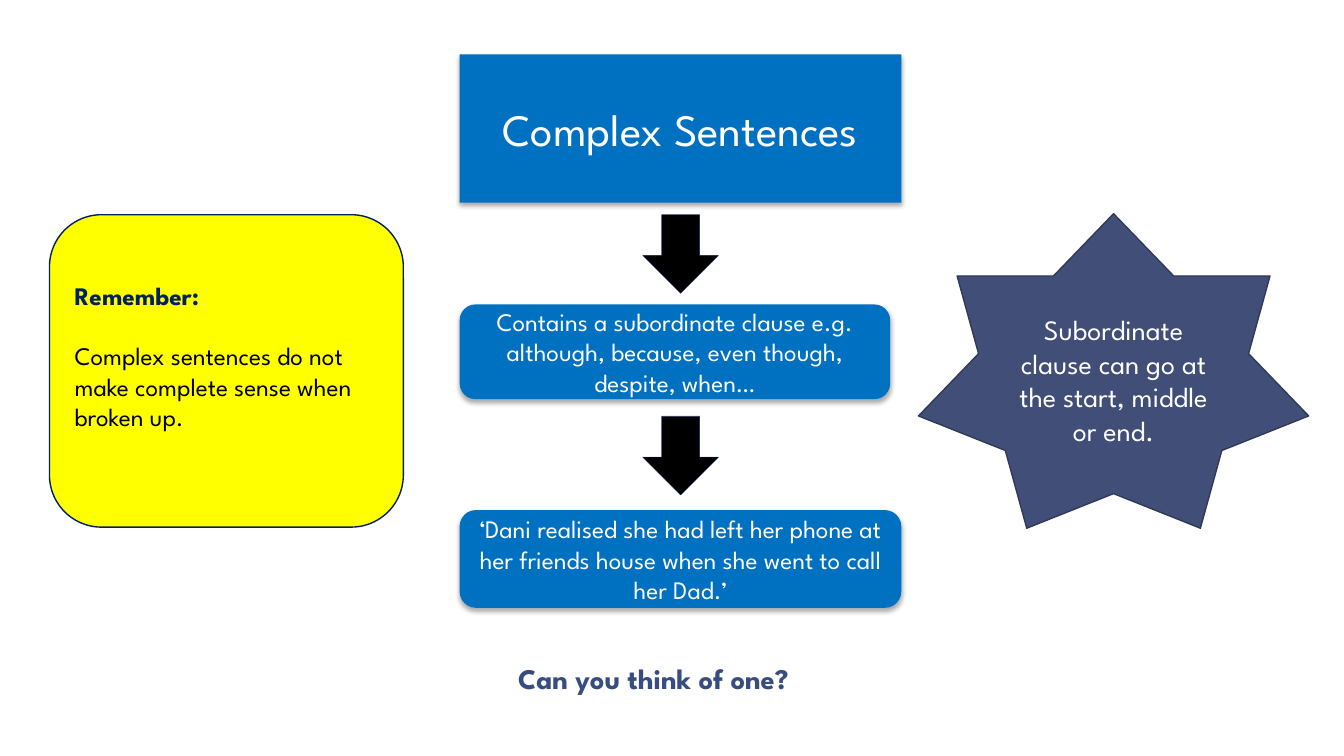
from lxml import etree
from pptx import Presentation
from pptx import util as u
from pptx.dml.color import RGBColor
from pptx.enum import shapes, text
from pptx.oxml.ns import qn

WIDE, HIGH = u.Inches(13.33), u.Inches(7.5)
FONT = "League Spartan"
HUES = {"blue": "0070C0", "navy": "002060", "slate": "414E77", "edge": "303A58",
        "ask": "374C81", "yellow": "FFFF00", "black": "000000", "white": "FFFFFF"}
KIND = shapes.MSO_SHAPE
MID = text.PP_ALIGN.CENTER
LEFT, SPAN = 34.2, 32.86  # middle column, percent of slide width


def hue(name):
    return RGBColor.from_string(HUES[name])


def place(x, y, w, h):
    """Turn percentages of the slide into left, top, width, height."""
    return [int(full * part / 100) for full, part in zip((WIDE, HIGH) * 2, (x, y, w, h))]


def paint(shape, fill, line=None, width=1):
    shape.shadow.inherit = False
    shape.fill.solid()
    shape.fill.fore_color.rgb = hue(fill)
    if line:
        shape.line.color.rgb = hue(line)
        shape.line.width = u.Pt(width)
    else:
        shape.line.fill.background()


def write(shape, *lines, size=18, color="white", bold=False, align=MID,
          top=0.05, side=0.1, base=0.05, gap=0, lead=None,
          anchor=text.MSO_ANCHOR.MIDDLE):
    """Fill a shape; a line is a string, or a tuple of string, colour and bold."""
    frame = shape.text_frame
    frame.word_wrap = True
    frame.auto_size = text.MSO_AUTO_SIZE.NONE
    frame.vertical_anchor = anchor
    frame.margin_left = frame.margin_right = u.Inches(side)
    frame.margin_top, frame.margin_bottom = u.Inches(top), u.Inches(base)
    for i, line in enumerate(lines):
        words, tint, heavy = (line, color, bold) if isinstance(line, str) else line
        para = frame.add_paragraph() if i else frame.paragraphs[0]
        para.alignment = align
        if i:
            para.space_before = u.Pt(gap)
        if lead:
            para.line_spacing = lead
        run = para.add_run()
        run.text = words
        run.font.name, run.font.size, run.font.bold = FONT, u.Pt(size), heavy
        run.font.color.rgb = hue(tint)


def shade(shape):
    """Add a soft shadow below the shape."""
    effect = shape._element.spPr.find(qn("a:effectLst"))
    drop = etree.SubElement(effect, qn("a:outerShdw"), blurRad=str(u.Pt(3.5)),
                            dist=str(u.Pt(2.2)), dir="5400000", rotWithShape="0")
    tint = etree.SubElement(drop, qn("a:srgbClr"), val=HUES["black"])
    etree.SubElement(tint, qn("a:alpha"), val="32000")


def add_box(slide, kind, spot, fill, line=None, width=1):
    shape = slide.shapes.add_shape(kind, *place(*spot))
    paint(shape, fill, line, width)
    return shape


def add_title(slide, words, spot):
    """Give the title placeholder a round-cornered blue panel."""
    title = slide.shapes.title
    title.left, title.top, title.width, title.height = place(*spot)
    form = etree.SubElement(title._element.spPr, qn("a:prstGeom"), prst="roundRect")
    etree.SubElement(form, qn("a:avLst"))
    paint(title, "blue")
    shade(title)
    write(title, words, size=32)


def add_step(slide, words, y, w, h):
    step = add_box(slide, KIND.ROUNDED_RECTANGLE, (LEFT, y, w, h), "blue")
    shade(step)
    write(step, words)


def add_arrow(slide, y):
    arrow = add_box(slide, KIND.DOWN_ARROW, (47.83, y, 5.63, 10.4), "black", "navy", 0.5)
    tint = arrow.line._ln.find(".//" + qn("a:srgbClr"))
    etree.SubElement(tint, qn("a:alpha"), val="60000")


def main():
    deck = Presentation()
    deck.slide_width, deck.slide_height = WIDE, HIGH
    slide = deck.slides.add_slide(deck.slide_layouts[5])

    add_title(slide, "Complex Sentences", (LEFT, 7.2, SPAN, 19.6))
    add_arrow(slide, 28.4)
    add_step(slide, "Contains a subordinate clause e.g. although, because, even though, "
             "despite, when…", 40.27, 32.03, 12.53)
    add_arrow(slide, 55.07)
    add_step(slide, "‘Dani realised she had left her phone at her friends house when "
             "she went to call her Dad.’", 67.47, SPAN, 12.93)

    ask = slide.shapes.add_textbox(*place(37.58, 86.8, 26.18, 8.27))
    write(ask, "Can you think of one?", size=20.3, color="ask", bold=True,
          align=text.PP_ALIGN.LEFT, top=0.07, side=0.13, base=0.07, lead=0.95,
          anchor=text.MSO_ANCHOR.TOP)

    note = add_box(slide, KIND.ROUNDED_RECTANGLE, (3.68, 28.4, 26.33, 41.33), "yellow", "navy")
    write(note, ("Remember:", "navy", True),
          "Complex sentences do not make complete sense when broken up.",
          color="black", align=text.PP_ALIGN.LEFT, base=0.35, gap=21.6)

    star = add_box(slide, KIND.STAR_7_POINT, (68.34, 28.27, 29.03, 41.6), "slate", "edge")
    write(star, "Subordinate clause can go at the start, middle or end.", size=20, top=0.38)

    deck.save("out.pptx")


if __name__ == "__main__":
    main()
